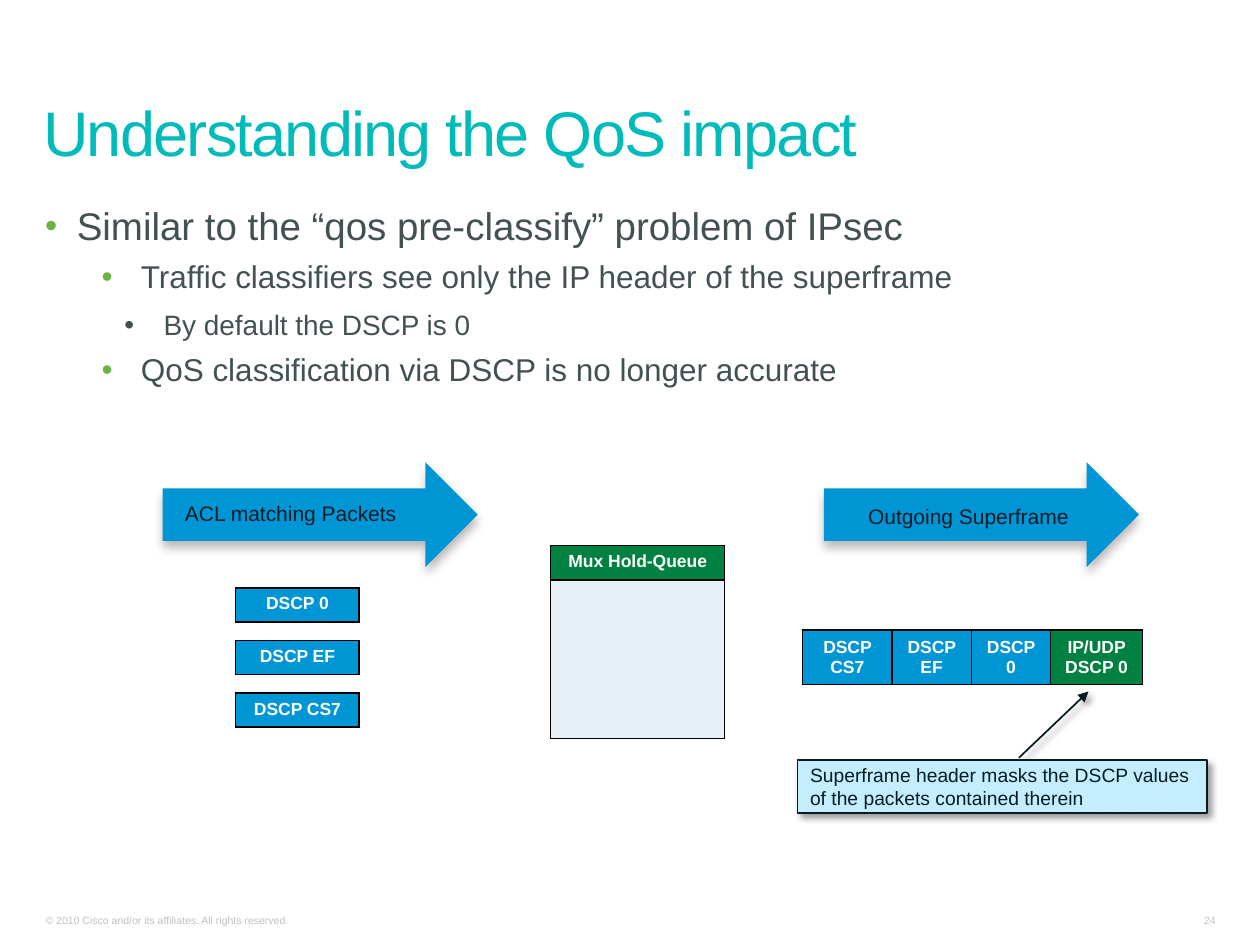
from lxml import etree
from pptx import Presentation
from pptx import util as u
from pptx.dml.color import RGBColor
from pptx.enum import shapes, text
from pptx.oxml import parse_xml
from pptx.oxml.ns import nsdecls, qn

FONT = "Arial"
BLUE = RGBColor(0x00, 0x96, 0xD6)
TEAL = RGBColor(0x01, 0xBB, 0xBB)
GREEN = RGBColor(0x00, 0x80, 0x41)
BULLET_GREEN = RGBColor(0x6D, 0xB3, 0x44)
SLATE = RGBColor(0x43, 0x51, 0x53)
INK = RGBColor(0x06, 0x1C, 0x23)
SILVER = RGBColor(0xC0, 0xC0, 0xC0)
PALE = RGBColor(0xE7, 0xEF, 0xF7)
SKY = RGBColor(0xC4, 0xED, 0xFF)
WHITE = RGBColor(0xFF, 0xFF, 0xFF)
BLACK = RGBColor(0x00, 0x00, 0x00)

LEFT = text.PP_ALIGN.LEFT
CENTER = text.PP_ALIGN.CENTER
RIGHT = text.PP_ALIGN.RIGHT


def place(shape, left, top, width, height):
    shape.left, shape.top = u.Cm(left), u.Cm(top)
    shape.width, shape.height = u.Cm(width), u.Cm(height)


def add_run(paragraph, words, size, color, bold=False):
    run = paragraph.add_run()
    run.text = words
    run.font.name = FONT
    run.font.size = u.Pt(size)
    run.font.bold = bold
    run.font.color.rgb = color
    return run


def set_title(slide, words):
    title = slide.shapes.title
    place(title, 0.64, 1.19, 23.85, 2.34)
    frame = title.text_frame
    frame.auto_size = text.MSO_AUTO_SIZE.NONE
    frame.vertical_anchor = text.MSO_ANCHOR.BOTTOM
    frame.margin_left = frame.margin_right = u.Cm(0.23)
    paragraph = frame.paragraphs[0]
    paragraph.alignment = LEFT
    paragraph.line_spacing = 0.8
    run = add_run(paragraph, words, 36, TEAL)
    run.font._element.set("spc", "-100")


def add_label(slide, box, words, size, color, align=LEFT, wrap=False):
    label = slide.shapes.add_textbox(*map(u.Cm, box))
    frame = label.text_frame
    frame.word_wrap = wrap
    paragraph = frame.paragraphs[0]
    paragraph.alignment = align
    add_run(paragraph, words, size, color)
    return frame


def add_footer(slide, box, words, align, wrap):
    frame = add_label(slide, box, words, 6, SILVER, align, wrap)
    frame.vertical_anchor = text.MSO_ANCHOR.BOTTOM
    frame.margin_left = frame.margin_right = u.Cm(0.23)
    frame.margin_top = frame.margin_bottom = u.Cm(0.1)


def set_bullet(paragraph, margin, indent, color, percent):
    properties = paragraph._p.get_or_add_pPr()
    properties.set("marL", str(u.Cm(margin)))
    properties.set("indent", str(-u.Cm(indent)))
    bullet_color = etree.SubElement(properties, qn("a:buClr"))
    etree.SubElement(bullet_color, qn("a:srgbClr"), val=str(color))
    etree.SubElement(properties, qn("a:buSzPct"), val=str(percent * 1000))
    etree.SubElement(properties, qn("a:buFont"), typeface=FONT)
    etree.SubElement(properties, qn("a:buChar"), char="•")


def add_bullets(slide, items):
    styles = [
        (22, 0, 0.64, 0.64, BULLET_GREEN, 90),
        (18, 6, 1.93, 0.79, BULLET_GREEN, 100),
        (16, 8.4, 2.39, 0.79, SLATE, 100),
    ]
    body = slide.shapes.add_textbox(*map(u.Cm, (0.66, 4.01, 23.83, 4.67)))
    frame = body.text_frame
    frame.word_wrap = True
    for index, (level, words) in enumerate(items):
        size, before, margin, indent, color, percent = styles[level]
        paragraph = frame.add_paragraph() if index else frame.paragraphs[0]
        paragraph.level = level
        set_bullet(paragraph, margin, indent, color, percent)
        paragraph.line_spacing = 0.95
        paragraph.space_before = u.Pt(before)
        add_run(paragraph, words, size, SLATE)


def add_shadow(shape, opacity, blur, distance, angle):
    shape.shadow.inherit = False
    effects = shape._element.spPr.find(qn("a:effectLst"))
    effects.append(parse_xml(
        f'<a:outerShdw {nsdecls("a")} blurRad="{u.Pt(blur)}" dist="{u.Pt(distance)}" '
        f'dir="{angle * 60000}" algn="tl" rotWithShape="0"><a:srgbClr val="{BLACK}">'
        f'<a:alpha val="{opacity * 1000}"/></a:srgbClr></a:outerShdw>'))


def add_arrow(slide, left, label_box, words):
    arrow = slide.shapes.add_shape(
        shapes.MSO_SHAPE.RIGHT_ARROW, u.Cm(left), u.Cm(9.32), u.Cm(6.35), u.Cm(2.11))
    arrow.fill.solid()
    arrow.fill.fore_color.rgb = BLUE
    arrow.line.fill.background()
    add_shadow(arrow, 27, 6, 4, 90)
    add_label(slide, label_box, words, 12, INK)


def set_borders(cell):
    properties = cell._tc.get_or_add_tcPr()
    for index, side in enumerate(("lnL", "lnR", "lnT", "lnB")):
        properties.insert(index, parse_xml(
            f'<a:{side} {nsdecls("a")} w="{u.Pt(1)}"><a:solidFill>'
            f'<a:srgbClr val="{BLACK}"/></a:solidFill></a:{side}>'))


def add_table(slide, left, top, widths, heights, rows, anchor=text.MSO_ANCHOR.TOP):
    table = slide.shapes.add_table(
        len(heights), len(widths), u.Cm(left), u.Cm(top),
        u.Cm(sum(widths)), u.Cm(sum(heights))).table
    table.first_row = table.horz_banding = False
    for column, width in zip(table.columns, widths):
        column.width = u.Cm(width)
    for row, height, contents in zip(table.rows, heights, rows):
        row.height = u.Cm(height)
        for cell, (lines, color) in zip(row.cells, contents):
            cell.fill.solid()
            cell.fill.fore_color.rgb = color
            cell.vertical_anchor = anchor
            set_borders(cell)
            frame = cell.text_frame
            for index, line in enumerate(lines):
                paragraph = frame.add_paragraph() if index else frame.paragraphs[0]
                paragraph.alignment = CENTER
                add_run(paragraph, line, 10, WHITE, bold=True)


def add_callout(slide, words):
    callout = slide.shapes.add_shape(
        shapes.MSO_SHAPE.LINE_CALLOUT_1, u.Cm(16.08), u.Cm(15.32), u.Cm(8.26), u.Cm(1.07))
    for index, value in enumerate((-0.04, 0.54, -1.29, 0.71)):
        callout.adjustments[index] = value
    callout.fill.solid()
    callout.fill.fore_color.rgb = SKY
    callout.line.color.rgb = INK
    callout.line.width = u.Pt(1)
    etree.SubElement(callout.line._get_or_add_ln(), qn("a:tailEnd"), type="triangle")
    add_shadow(callout, 40, 4, 3, 45)
    frame = callout.text_frame
    frame.word_wrap = True
    frame.vertical_anchor = text.MSO_ANCHOR.MIDDLE
    paragraph = frame.paragraphs[0]
    paragraph.alignment = LEFT
    add_run(paragraph, words, 11, INK)


def main():
    presentation = Presentation()
    presentation.slide_width, presentation.slide_height = u.Cm(25.4), u.Cm(19.05)
    slide = presentation.slides.add_slide(presentation.slide_layouts[5])

    add_footer(slide, (0.69, 18.29, 9.5, 0.48),
               "© 2010 Cisco and/or its affiliates. All rights reserved.", LEFT, True)
    add_footer(slide, (24.03, 18.29, 0.71, 0.48), "24", RIGHT, False)
    set_title(slide, "Understanding the QoS impact")
    add_bullets(slide, [
        (0, "Similar to the “qos pre-classify” problem of IPsec"),
        (1, "Traffic classifiers see only the IP header of the superframe"),
        (2, "By default the DSCP is 0"),
        (1, "QoS classification via DSCP is no longer accurate"),
    ])

    add_arrow(slide, 3.28, (3.48, 9.96, 4.85, 0.76), "ACL matching Packets")
    add_arrow(slide, 16.61, (17.25, 10.03, 4.6, 0.76), "Outgoing Superframe")

    add_table(slide, 11.1, 11, [3.51], [0.69, 3.2],
              [[(["Mux Hold-Queue"], GREEN)], [([], PALE)]])
    for index, packet in enumerate(("DSCP 0", "DSCP EF", "DSCP CS7")):
        add_table(slide, 4.75, 11.85 + index * 1.06, [2.49], [0.69], [[([packet], BLUE)]])
    superframe = [(["DSCP CS7"], BLUE), (["DSCP EF"], BLUE), (["DSCP 0"], BLUE),
                  (["IP/UDP", "DSCP 0"], GREEN)]
    add_table(slide, 16.18, 12.7, [1.8, 1.6, 1.6, 1.85], [1.09], [superframe],
              text.MSO_ANCHOR.MIDDLE)
    add_callout(slide, "Superframe header masks the DSCP values of the packets contained therein")

    presentation.save("out.pptx")


if __name__ == "__main__":
    main()
